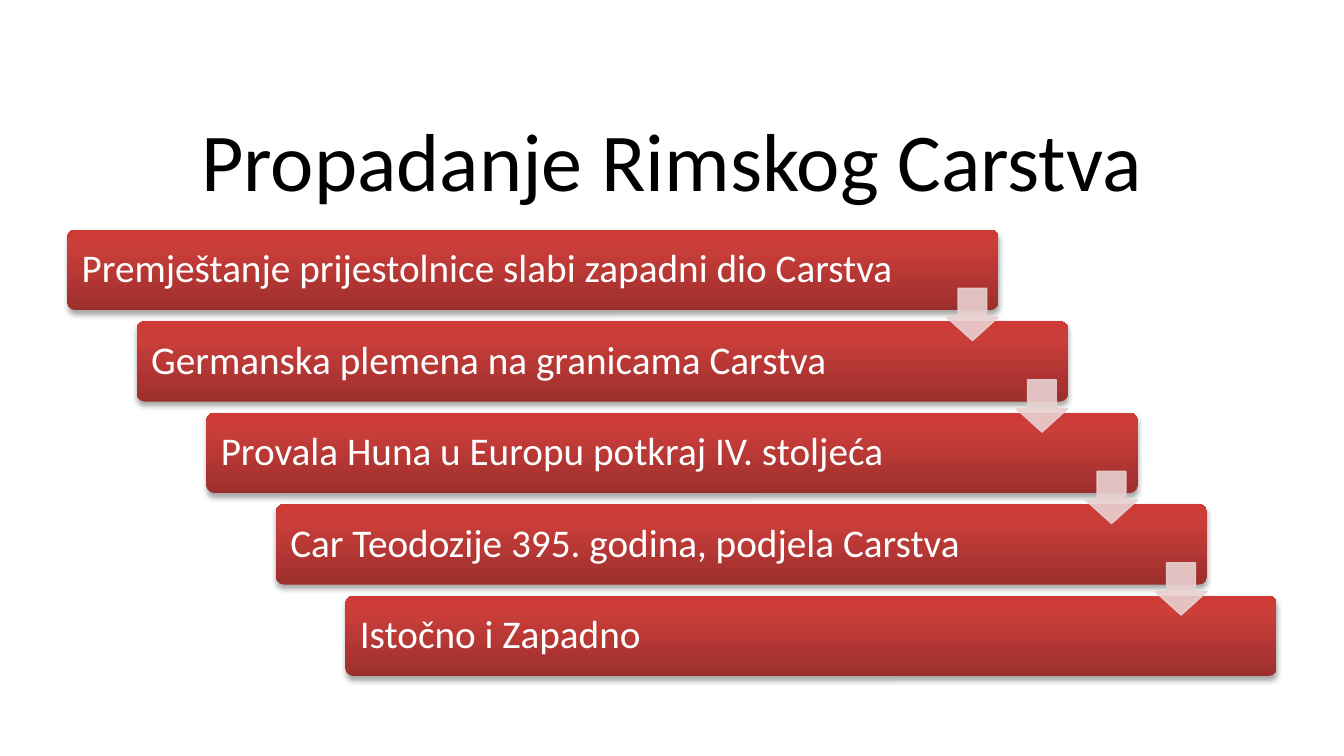
from lxml.etree import SubElement
from pptx import Presentation
from pptx.dml.color import RGBColor
from pptx.enum.shapes import MSO_SHAPE as Shape
from pptx.enum.text import MSO_ANCHOR as Anchor, PP_ALIGN as Align
from pptx.oxml.ns import qn
from pptx.util import Cm, Pt

BLACK = RGBColor(0x00, 0x00, 0x00)
WHITE = RGBColor(0xFF, 0xFF, 0xFF)
PINK = RGBColor(0xE8, 0xD0, 0xD0)
RED_STOPS = [
    (0, RGBColor(0x9C, 0x2F, 0x2D)),
    (80, RGBColor(0xCB, 0x3E, 0x3A)),
    (100, RGBColor(0xCE, 0x3B, 0x37)),
]
FONT = "Calibri"

TITLE = "Propadanje Rimskog Carstva"
STAGES = [
    "Premještanje prijestolnice slabi zapadni dio Carstva",
    "Germanska plemena na granicama Carstva",
    "Provala Huna u Europu potkraj IV. stoljeća",
    "Car Teodozije 395. godina, podjela Carstva",
    "Istočno i Zapadno",
]


def format_text(frame, text, size, color, align):
    frame.word_wrap = True
    frame.vertical_anchor = Anchor.MIDDLE
    paragraph = frame.paragraphs[0]
    paragraph.text = text
    paragraph.alignment = align
    paragraph.line_spacing = 0.9
    paragraph.font.name = FONT
    paragraph.font.size = Pt(size)
    paragraph.font.color.rgb = color


def fill_red(bar):
    bar.fill.gradient()
    bar.fill.gradient_angle = 90
    stops = bar._element.spPr.find(".//" + qn("a:gsLst"))
    stops.clear()
    for percent, color in RED_STOPS:
        stop = SubElement(stops, qn("a:gs"), pos=str(percent * 1000))
        SubElement(stop, qn("a:srgbClr"), val=str(color))


def add_soft_shadow(bar):
    bar.shadow.inherit = False
    effects = bar._element.spPr.find(qn("a:effectLst"))
    shadow = SubElement(effects, qn("a:outerShdw"), blurRad=str(Pt(3.1)),
                        dist=str(Pt(1.8)), dir="5400000", rotWithShape="0")
    color = SubElement(shadow, qn("a:srgbClr"), val=str(BLACK))
    SubElement(color, qn("a:alpha"), val="35000")


def add_bar(shapes, text, left, top, width, height):
    bar = shapes.add_shape(Shape.ROUNDED_RECTANGLE, left, top, width, height)
    bar.adjustments[0] = 0.1
    fill_red(bar)
    bar.line.fill.background()
    add_soft_shadow(bar)
    frame = bar.text_frame
    frame.margin_left = frame.margin_right = Cm(0.23)
    frame.margin_top = frame.margin_bottom = Cm(0.23)
    format_text(frame, text, 21, WHITE, Align.LEFT)


def add_arrow(shapes, left, top, size):
    arrow = shapes.add_shape(Shape.DOWN_ARROW, left, top, size, size)
    arrow.adjustments[0] = 0.55
    arrow.adjustments[1] = 0.45
    arrow.shadow.inherit = False
    arrow.fill.solid()
    arrow.fill.fore_color.rgb = PINK
    arrow.line.color.rgb = PINK
    arrow.line.width = Pt(0.75)
    for color in arrow._element.spPr.iter(qn("a:srgbClr")):
        SubElement(color, qn("a:alpha"), val="90000")


def place_title(slide, left, top, width, height):
    title = slide.shapes.title
    title.left, title.top, title.width, title.height = left, top, width, height
    format_text(title.text_frame, TITLE, 44, BLACK, Align.CENTER)


def add_staircase(slide, left, top, width, height):
    """Bars step down to the right, with an arrow over each gap."""
    shapes = slide.shapes.add_group_shape().shapes
    bar_width, bar_height = int(width * 0.77), int(height * 0.18)
    gaps = len(STAGES) - 1
    step_x = (width - bar_width) / gaps
    step_y = (height - bar_height) / gaps
    corners = [(int(left + i * step_x), int(top + i * step_y))
               for i in range(len(STAGES))]
    for text, (x, y) in zip(STAGES, corners):
        add_bar(shapes, text, x, y, bar_width, bar_height)

    arrow_size = int(bar_height * 0.65)
    for x, y in corners[:-1]:
        add_arrow(shapes, x + bar_width - arrow_size,
                  y + int(bar_height * 0.73), arrow_size)


def main():
    deck = Presentation()
    deck.slide_width, deck.slide_height = Cm(25.4), Cm(14.28)
    slide = deck.slides.add_slide(deck.slide_layouts[5])
    place_title(slide, Cm(1.27), Cm(2.13), Cm(22.86), Cm(1.98))
    add_staircase(slide, Cm(1.27), Cm(4.34), Cm(22.86), Cm(8.43))
    deck.save("out.pptx")


if __name__ == "__main__":
    main()
